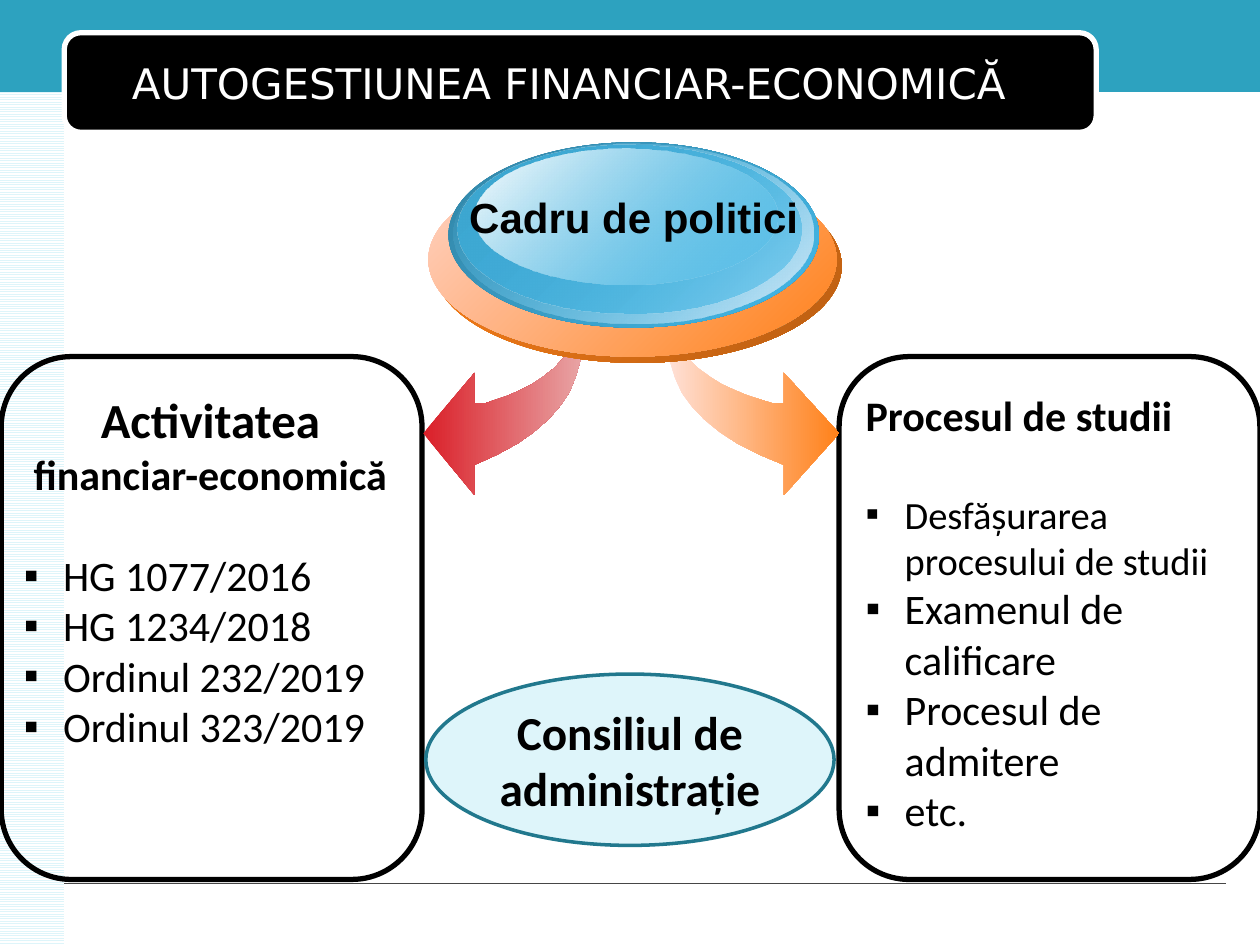
from lxml.etree import SubElement
from pptx import Presentation
from pptx.dml.color import RGBColor
from pptx.enum.dml import MSO_PATTERN
from pptx.enum.shapes import MSO_CONNECTOR, MSO_SHAPE as SHAPE
from pptx.enum.text import MSO_ANCHOR as ANCHOR, MSO_AUTO_SIZE, PP_ALIGN as ALIGN
from pptx.oxml.ns import qn
from pptx.util import Inches, Pt

COLUMNS, ROWS = 100, 75

ARROW_OUTLINE = [
    (0, 25.7), (0, 27.2), (0.02, 28.7), (0.05, 30), (0.09, 31.2), (0.15, 32.3),
    (0.22, 33.3), (0.31, 34.3), (0.41, 35.2), (0.54, 36.1), (0.68, 36.9),
    (0.68, 39.3), (1, 34.4), (0.68, 29.6), (0.68, 32), (0.61, 32), (0.54, 31.7),
    (0.47, 31.4), (0.4, 31), (0.32, 30.5), (0.25, 29.9), (0.18, 29.2),
    (0.13, 28.5), (0.07, 27.8), (0.04, 27.1), (0.01, 26.4),
]

DISC_LAYERS = [
    ((34.4, 13.4, 32.4, 15.4), ("FF8119", 100), ("BA5E12", 100)),
    ((34, 12.9, 32.4, 15.4), ("FFD3C6", 100), ("FF8119", 100)),
    ((35.6, 11.3, 29.4, 14.7), ("3184A6", 100), ("44B9E8", 100)),
    ((36, 11.4, 28.6, 14.3), ("44B9E8", 0), ("D6EAF7", 100)),
    ((36.3, 11.5, 27.3, 13.4), ("3DA7D2", 100), ("44B9E8", 48)),
    ((37.7, 11.8, 24, 10.8), ("FFFFFF", 100), ("44B9E8", 38)),
]


def color(code):
    return RGBColor.from_string(code)


def apply(target, values):
    for name, value in values.items():
        setattr(target, name, value)


class SlidePainter:
    ink = "000000"
    font = "Calibri"
    size = 24
    bullet = "▪"
    indent = Inches(0.31)

    def __init__(self, deck, layout):
        self.column = deck.slide_width / COLUMNS
        self.row = deck.slide_height / ROWS
        self.page = deck.slides.add_slide(deck.slide_layouts[layout])

    def grid(self, left, top, width, height):
        return [round(left * self.column), round(top * self.row),
                round(width * self.column), round(height * self.row)]

    def finish(self, box, fill=None, line=None, width=1):
        box.shadow.inherit = False
        if fill:
            box.fill.solid()
            box.fill.fore_color.rgb = color(fill)
        else:
            box.fill.background()
        if line:
            box.line.color.rgb = color(line)
            box.line.width = Pt(width)
        else:
            box.line.fill.background()
        return box

    def shape(self, kind, area, parent=None, **look):
        shapes = (parent or self.page).shapes
        return self.finish(shapes.add_shape(kind, *self.grid(*area)), **look)

    def gradient(self, box, stops, angle=0):
        box.fill.gradient()
        box.fill.gradient_angle = -angle % 360
        for stop, position, (code, _) in zip(box.fill.gradient_stops, (0, 1), stops):
            stop.position = position
            stop.color.rgb = color(code)
        for element, (_, opacity) in zip(box._element.iter(qn("a:srgbClr")), stops):
            if opacity < 100:
                SubElement(element, qn("a:alpha")).set("val", str(opacity * 1000))

    def stripes(self, area, front, back):
        box = self.shape(SHAPE.RECTANGLE, area)
        box.fill.patterned()
        box.fill.pattern = MSO_PATTERN.LIGHT_HORIZONTAL
        box.fill.fore_color.rgb = color(front)
        box.fill.back_color.rgb = color(back)

    def rule(self, left, right, row, code):
        start, top, width, _ = self.grid(left, row, right - left, 0)
        line = self.page.shapes.add_connector(
            MSO_CONNECTOR.STRAIGHT, start, top, start + width, top)
        line.line.color.rgb = color(code)
        line.line.width = Pt(0.25)
        SubElement(line._element.spPr, qn("a:effectLst"))

    def arrow(self, tail, reach, stops):
        points = [(round((tail + share * reach) * self.column), round(row * self.row))
                  for share, row in ARROW_OUTLINE]
        builder = self.page.shapes.build_freeform(*points[0])
        builder.add_line_segments(points[1:], close=True)
        self.gradient(self.finish(builder.convert_to_shape()), stops)

    def disc(self, layers):
        group = self.page.shapes.add_group_shape()
        for area, *stops in layers:
            self.gradient(self.shape(SHAPE.OVAL, area, group), stops, 45)

    def placeholder(self, index, area):
        box = self.page.placeholders[index]
        apply(box, dict(zip(("left", "top", "width", "height"), self.grid(*area))))
        self.page.shapes._spTree.append(box._element)
        return box

    def label(self, area):
        return self.page.shapes.add_textbox(*self.grid(*area))

    def add_text(self, box, paragraphs, ink=ink, **frame_format):
        frame = box.text_frame
        apply(frame, {"word_wrap": True, "auto_size": MSO_AUTO_SIZE.NONE,
                      "vertical_anchor": ANCHOR.TOP, **frame_format})
        for number, (spans, para_format, bulleted) in enumerate(paragraphs):
            para = frame.add_paragraph() if number else frame.paragraphs[0]
            apply(para, {"space_before": Pt(0), **para_format})
            properties = para._p.get_or_add_pPr()
            properties.set("marL", str(self.indent if bulleted else 0))
            properties.set("indent", str(-self.indent if bulleted else 0))
            if bulleted:
                SubElement(properties, qn("a:buFont")).set("typeface", "Arial")
                SubElement(properties, qn("a:buChar")).set("char", self.bullet)
            else:
                SubElement(properties, qn("a:buNone"))
            for text, values in spans:
                span = para.add_run()
                span.text = text
                apply(span.font, {"name": self.font, "size": Pt(self.size),
                                  "bold": not bulleted, **values})
                span.font.color.rgb = color(ink)


def heading(*spans, **para_format):
    return spans, para_format, False


def item(text, **font):
    return [(text, font)], {"alignment": ALIGN.LEFT}, True


def main():
    deck = Presentation()
    deck.slide_width, deck.slide_height = Inches(10), Inches(7.5)
    painter = SlidePainter(deck, 3)
    centered = {"alignment": ALIGN.CENTER}
    blank_line = {"space_after": Pt(29)}

    painter.stripes((0, 0, 5.1, 75), "DEF5FA", "FFFFFF")
    painter.shape(SHAPE.RECTANGLE, (0, -0.3, 100, 7.6), fill="2DA2BF")
    painter.rule(5.1, 97.3, 70.1, "464646")
    painter.shape(SHAPE.ROUNDED_RECTANGLE, (5.1, 2.6, 81.9, 7.9),
                  fill="000000", line="FFFFFF", width=3)
    painter.add_text(painter.placeholder(0, (6, 3.5, 78.3, 6.2)), [heading(
        ("AUTOGESTIUNEA FINANCIAR-ECONOMICĂ", {"name": "DejaVu Sans", "bold": False}),
        **centered)], ink="FFFFFF", vertical_anchor=ANCHOR.MIDDLE)

    for left in (66.6, 0.1):
        painter.shape(SHAPE.ROUNDED_RECTANGLE, (left, 28.3, 33.4, 41.5),
                      line="000000", width=3)

    painter.add_text(painter.placeholder(1, (0.9, 30.4, 31.6, 30)), [
        heading(("Activitatea ", {"size": Pt(28)}), ("financiar-economică", {}),
                **centered, **blank_line),
        *map(item, ("HG 1077/2016", "HG 1234/2018",
                    "Ordinul 232/2019", "Ordinul 323/2019")),
    ])

    painter.arrow(46.3, -12.7, [("DA1F28", 100), ("E8A5A6", 100)])
    painter.arrow(52.9, 13.7, [("FFE1D8", 100), ("FF8119", 100)])
    painter.disc(DISC_LAYERS)
    painter.add_text(painter.label((36.1, 14.7, 28.4, 5)), [
        heading(("Cadru de politici", {"name": "Arial"}), **centered)], word_wrap=False)

    painter.add_text(painter.placeholder(2, (67.7, 30.4, 31.4, 39)), [
        heading(("Procesul de studii", {}), alignment=ALIGN.LEFT, **blank_line),
        item("Desfășurarea procesului de studii", size=Pt(22)),
        *map(item, ("Examenul de calificare", "Procesul de admitere", "etc.")),
    ])

    council = painter.shape(SHAPE.OVAL, (33.8, 53.5, 32.4, 13.6),
                            fill="DEF5FA", line="21788D", width=2)
    painter.add_text(council, [
        heading(("Consiliul de administrație", {"size": Pt(27)}), **centered)],
        vertical_anchor=ANCHOR.MIDDLE, margin_left=0, margin_right=0)

    deck.save("out.pptx")


if __name__ == "__main__":
    main()
